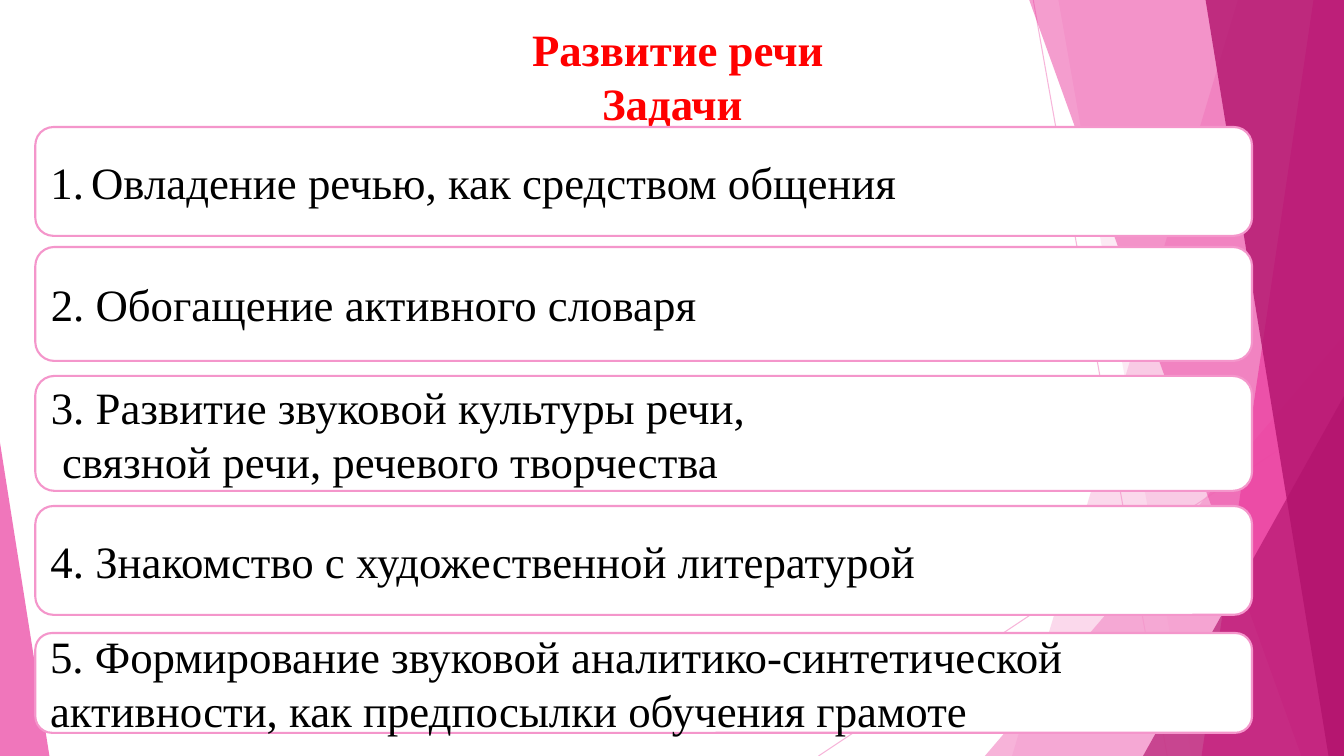
from lxml.etree import SubElement
from pptx import Presentation
from pptx.dml.color import RGBColor
from pptx.enum.shapes import MSO_CONNECTOR as Link, MSO_SHAPE as Kind
from pptx.enum.text import MSO_ANCHOR as Anchor, PP_ALIGN as Align
from pptx.oxml.ns import qn
from pptx.util import Inches, Pt

PINK, ROSE, WINE = "F496CB", "EB3D9F", "B2136D"
RED, BLACK, WHITE = "FF0000", "000000", "FFFFFF"


def tint(fill, code, alpha=100):
    """Make a fill solid, with its opacity in percent."""
    fill.solid()
    fill.fore_color.rgb = RGBColor.from_string(code)
    if alpha < 100:
        tone = fill._xPr.find(qn("a:solidFill"))[0]
        SubElement(tone, qn("a:alpha"), val=str(alpha * 1000))


class Board:
    """Draws on one slide; all lengths are percent of its width or height."""
    face, size = "Times New Roman", Pt(32)

    def __init__(self, deck):
        self.wide, self.high = deck.slide_width, deck.slide_height
        self.shapes = deck.slides.add_slide(deck.slide_layouts[6]).shapes

    def spot(self, x, y):
        return round(x * self.wide / 100), round(y * self.high / 100)

    def area(self, x, y, w, h):
        return *self.spot(x, y), *self.spot(w, h)

    def line(self, start, end):
        link = self.shapes.add_connector(
            Link.STRAIGHT, *self.spot(*start), *self.spot(*end))
        tint(link.line.fill, PINK, 70)
        link.line.width = Pt(0.75)
        SubElement(link._element.spPr, qn("a:effectLst"))

    def paint(self, shape, code, alpha):
        shape.shadow.inherit = False
        tint(shape.fill, code, alpha)
        shape.line.fill.background()

    def band(self, top, foot, code, alpha):
        """Fill from a slanted left side to the right edge of the slide."""
        pen = self.shapes.build_freeform(*self.spot(top, 0))
        pen.add_line_segments(
            [self.spot(*p) for p in ((100, 0), (100, 100), (foot, 100))])
        self.paint(pen.convert_to_shape(), code, alpha)

    def wedge(self, x, y, w, tip, code, alpha):
        """Place a triangle on the bottom edge of the slide."""
        shape = self.shapes.add_shape(
            Kind.ISOSCELES_TRIANGLE, *self.area(x, y, w, 100 - y))
        shape.adjustments[0] = tip
        self.paint(shape, code, alpha)

    def style(self, para, code, align, bold=False):
        para.alignment = align
        font = para.font
        font.name, font.size, font.bold = self.face, self.size, bold
        font.color.rgb = RGBColor.from_string(code)

    def title(self, text, *place):
        frame = self.shapes.add_textbox(*self.area(*place)).text_frame
        frame.word_wrap = True
        frame.text = text
        self.style(frame.paragraphs[0], RED, Align.CENTER, True)

    def card(self, y, h, text):
        """Add a rounded box and return its text frame."""
        shape = self.shapes.add_shape(
            Kind.ROUNDED_RECTANGLE, *self.area(2.63, y, 90.53, h))
        shape.shadow.inherit = False
        tint(shape.fill, WHITE)
        tint(shape.line.fill, PINK)
        shape.line.width = Pt(1.5)
        frame = shape.text_frame
        frame.word_wrap, frame.vertical_anchor = True, Anchor.MIDDLE
        frame.text = text
        for para in frame.paragraphs:
            self.style(para, BLACK, Align.LEFT)
        return frame


LINES = [((76.88, 0), (86.85, 100)), ((100, 53.73), (60.9, 100))]
BACK = [(92.1, 75.3, PINK, 36), (78.75, 88.65, PINK, 20)]
FRONT = [(76.58, 96.83, ROSE, 50), (97.73, 89.4, ROSE, 70),
         (89.7, 98.85, WINE, 80)]
TASKS = [
    (32.67, 15.07, "2. Обогащение активного словаря"),
    (49.73, 15.2, "3. Развитие звуковой культуры речи,\n"
                  " связной речи, речевого творчества"),
    (66.93, 14.4, "4. Знакомство с художественной литературой"),
    (83.73, 13.2, "5. Формирование звуковой аналитико-синтетической "
                  "активности, как предпосылки обучения грамоте"),
]


def main():
    deck = Presentation()
    deck.slide_width, deck.slide_height = Inches(13.33), Inches(7.5)
    board = Board(deck)
    for ends in LINES:
        board.line(*ends)
    for band in BACK:
        board.band(*band)
    board.wedge(73.28, 44.4, 26.72, 1, PINK, 72)
    for band in FRONT:
        board.band(*band)
    board.wedge(85.05, 52.4, 14.95, 1, WINE, 66)
    board.wedge(0, 58.53, 3.68, 0, ROSE, 70)

    board.title(" Развитие речи\vЗадачи", 6.9, 2.27, 86.25, 10)
    first = board.card(16.8, 14.4, "1.").paragraphs[0]
    gap, goal = first.add_run(), first.add_run()
    gap.text, goal.text = " ", "Овладение речью, как средством общения"
    gap.font.name, gap.font.size = "Arial", Pt(18)
    for task in TASKS:
        board.card(*task)
    deck.save("out.pptx")


if __name__ == "__main__":
    main()
